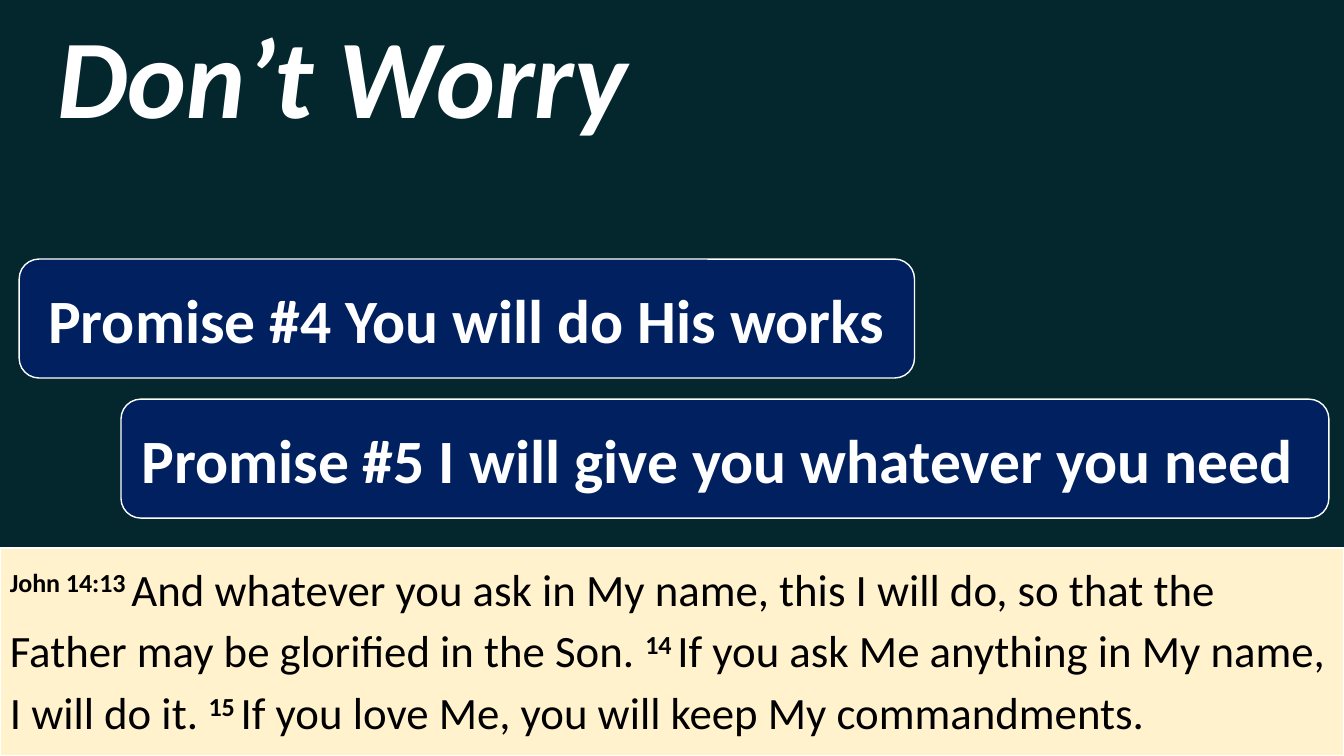
from pptx import Presentation
from pptx import util as u
from pptx.dml.color import RGBColor
from pptx.enum import shapes, text

FONT = "Calibri"
WHITE, BLACK = "FFFFFF", "000000"
NIGHT, NAVY, CREAM = "03272D", "002060", "FFF2CC"

PROMISES = [
    ("Promise #4 You will do His works", (0.19, 2.57, 8.88, 1.18)),
    ("Promise #5 I will give you whatever you need ", (1.2, 3.96, 11.98, 1.18)),
]
VERSES = [
    ("John 14:13 ", "And whatever you ask in My name, this I will do, so that the "
                    "Father may be glorified in the Son. "),
    ("14 ", "If you ask Me anything in My name, I will do it. "),
    ("15 ", "If you love Me, you will keep My commandments."),
]


def color(value):
    return RGBColor.from_string(value)


def add_panel(page, kind, area, fill=None, line=None, width=1):
    """Add a flat shape at area (left, top, width, height in inches)."""
    panel = page.shapes.add_shape(kind, *map(u.Inches, area))
    panel.shadow.inherit = False
    if fill:
        panel.fill.solid()
        panel.fill.fore_color.rgb = color(fill)
    else:
        panel.fill.background()
    if line:
        panel.line.color.rgb = color(line)
        panel.line.width = u.Pt(width)
    else:
        panel.line.fill.background()
    panel.text_frame.word_wrap = True
    return panel


def add_text(para, words, size, ink=WHITE, bold=False, italic=False, raised=0):
    """Append a run; raised is the superscript offset in percent."""
    span = para.add_run()
    span.text = words
    font = span.font
    font.name, font.size, font.bold, font.italic = FONT, u.Pt(size), bold, italic
    font.color.rgb = color(ink)
    if raised:
        font._element.set("baseline", str(raised * 1000))


def add_banner(page, words, area, size, italic=False, **look):
    """Add a rounded box with one centred bold line."""
    box = add_panel(page, shapes.MSO_SHAPE.ROUNDED_RECTANGLE, area, **look)
    box.text_frame.vertical_anchor = text.MSO_ANCHOR.MIDDLE
    para = box.text_frame.paragraphs[0]
    para.alignment = text.PP_ALIGN.CENTER
    add_text(para, words, size, bold=True, italic=italic)


def add_scripture(page, area):
    box = add_panel(page, shapes.MSO_SHAPE.RECTANGLE, area, CREAM, WHITE, 1.5)
    box.text_frame.vertical_anchor = text.MSO_ANCHOR.TOP
    para = box.text_frame.paragraphs[0]
    para.alignment = text.PP_ALIGN.LEFT
    para.line_spacing = 1.15
    para.space_after = u.Pt(8)
    for number, verse in VERSES:
        add_text(para, number, 32, BLACK, bold=True, raised=30)
        add_text(para, verse, 32, BLACK)


def main():
    deck = Presentation()
    deck.slide_width, deck.slide_height = u.Inches(13.33), u.Inches(7.5)
    page = deck.slides.add_slide(deck.slide_layouts[6])
    page.background.fill.solid()
    page.background.fill.fore_color.rgb = color(NIGHT)

    add_scripture(page, (0, 5.44, 13.33, 2.06))
    add_banner(page, "Don’t Worry ", (0.19, 0.14, 6.67, 1.18), 80, italic=True)
    for promise, area in PROMISES:
        add_banner(page, promise, area, 44, fill=NAVY, line=WHITE)
    deck.save("out.pptx")


if __name__ == "__main__":
    main()
